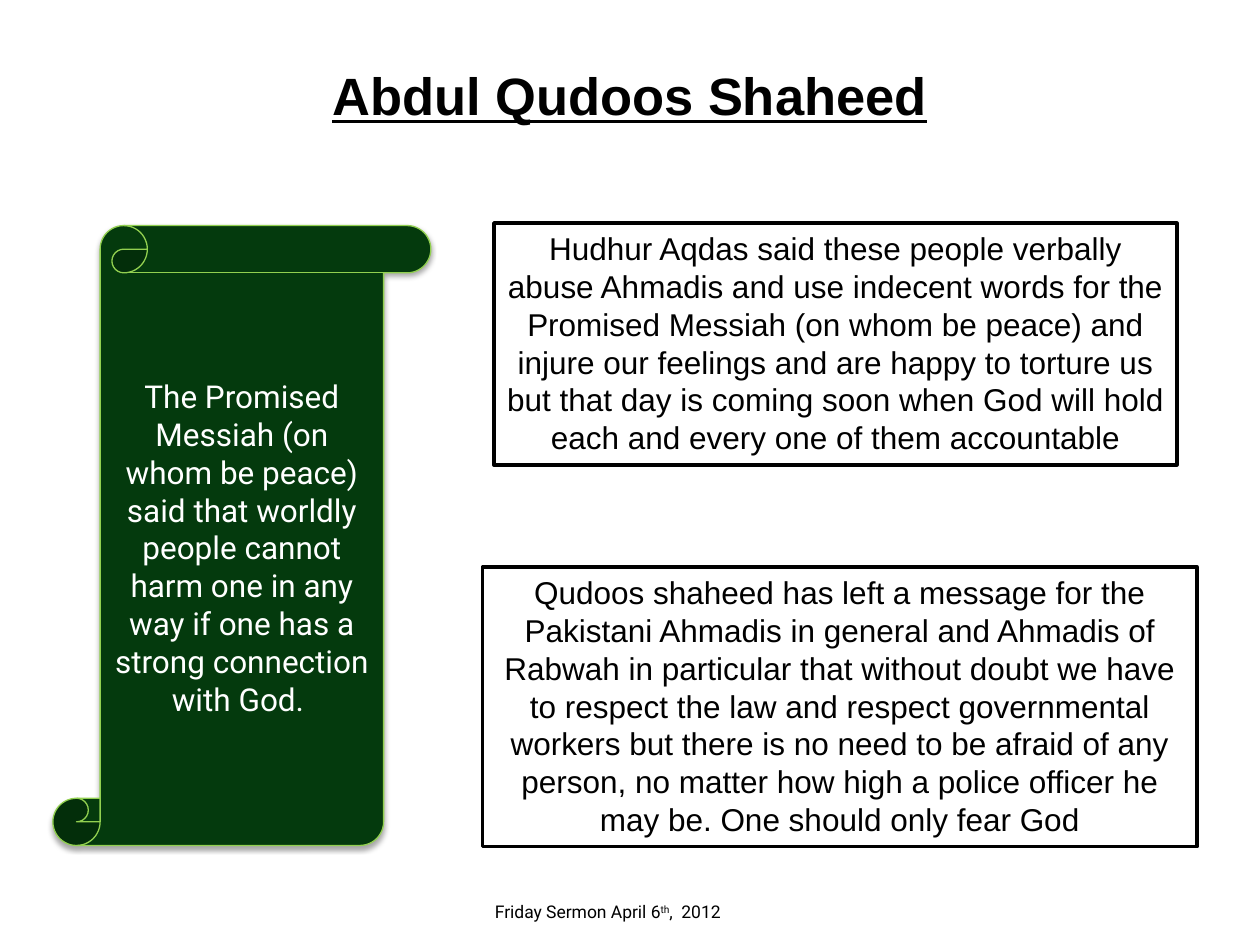
from lxml import etree
from pptx import Presentation
from pptx.dml.color import RGBColor
from pptx.enum.shapes import MSO_SHAPE
from pptx.enum.text import MSO_ANCHOR, MSO_AUTO_SIZE, PP_ALIGN
from pptx.oxml.ns import qn
from pptx.util import Inches, Pt

SCROLL = MSO_SHAPE.VERTICAL_SCROLL
RECT = MSO_SHAPE.RECTANGLE
TOP, MID = MSO_ANCHOR.TOP, MSO_ANCHOR.MIDDLE
GROW = MSO_AUTO_SIZE.SHAPE_TO_FIT_TEXT
FIXED = MSO_AUTO_SIZE.NONE
LEFT, CENTER = PP_ALIGN.LEFT, PP_ALIGN.CENTER
BLACK, WHITE, GREEN, LIME = "000000", "FFFFFF", "043A0D", "92D050"


def color(code):
    return RGBColor.from_string(code)


class Deck:
    title_font = {"name": "Arial", "size": Pt(30), "bold": True, "underline": True}
    body_font = {"name": "Arial", "size": Pt(18)}
    scroll_font = {"name": "Roboto", "size": Pt(18)}
    foot_font = {"name": "Roboto", "size": Pt(10)}

    def __init__(self, wide, high):
        self.show = Presentation()
        self.show.slide_width, self.show.slide_height = Inches(wide), Inches(high)
        self.slide = self.show.slides.add_slide(self.show.slide_layouts[5])

    def place(self, shape, box):
        for side, size in zip(("left", "top", "width", "height"), box):
            setattr(shape, side, Inches(size))

    def frame(self, shape, **form):
        for key, value in form.items():
            setattr(shape.text_frame, key, value)

    def letter(self, shape, parts, font, tint=BLACK, align=CENTER):
        para = shape.text_frame.paragraphs[0]
        para.alignment = align
        for part in parts:
            run = para.add_run()
            run.text = part
            for key, value in font.items():
                setattr(run.font, key, value)
            run.font.color.rgb = color(tint)

    def title(self, text, box):
        shape = self.slide.shapes.title
        self.place(shape, box)
        self.frame(shape, margin_left=0, margin_top=0, margin_right=0,
                   margin_bottom=0, vertical_anchor=TOP, auto_size=FIXED)
        self.letter(shape, [text], self.title_font)

    def panel(self, kind, box, fill, edge, width):
        shape = self.slide.shapes.add_shape(kind, *map(Inches, box))
        shape.shadow.inherit = False
        shape.fill.solid()
        shape.fill.fore_color.rgb = color(fill)
        shape.line.color.rgb = color(edge)
        shape.line.width = Pt(width)
        return shape

    def shade(self, shape):
        effects = next(shape.element.iter(qn("a:effectLst")))
        shadow = etree.SubElement(
            effects, qn("a:outerShdw"), blurRad=str(int(Pt(3.1))),
            dist=str(int(Pt(1.8))), dir="5400000", rotWithShape="0")
        tint = etree.SubElement(shadow, qn("a:srgbClr"), val=BLACK)
        etree.SubElement(tint, qn("a:alpha"), val="35000")

    def scroll(self, text, box):
        shape = self.panel(SCROLL, box, GREEN, LIME, 0.75)
        self.shade(shape)
        self.frame(shape, word_wrap=True, vertical_anchor=MID)
        self.letter(shape, [text], self.scroll_font, WHITE)

    def quote(self, text, box):
        shape = self.panel(RECT, box, WHITE, BLACK, 2)
        self.frame(shape, word_wrap=True, vertical_anchor=TOP, auto_size=GROW)
        self.letter(shape, [text], self.body_font)

    def footer(self, parts, box):
        shape = self.slide.shapes.add_textbox(*map(Inches, box))
        self.frame(shape, word_wrap=False, auto_size=GROW)
        self.letter(shape, parts, self.foot_font, align=LEFT)
        raised = list(shape.element.iter(qn("a:rPr")))[1]
        raised.set("baseline", "30000")


def main():
    deck = Deck(10, 7.5)
    deck.title("Abdul Qudoos Shaheed", (0.5, 0.5, 9, 1))
    deck.scroll(
        "The Promised Messiah (on whom be peace) said that worldly people cannot "
        "harm one in any way if one has a strong connection with God. ",
        (0.42, 1.79, 3, 4.92))
    deck.quote(
        "Hudhur Aqdas said these people verbally abuse Ahmadis and use indecent "
        "words for the Promised Messiah (on whom be peace) and injure our feelings "
        "and are happy to torture us but that day is coming soon when God will hold "
        "each and every one of them accountable",
        (3.92, 1.77, 5.42, 1.92))
    deck.quote(
        "Qudoos shaheed has left a message for the Pakistani Ahmadis in general and "
        "Ahmadis of Rabwah in particular that without doubt we have to respect the "
        "law and respect governmental workers but there is no need to be afraid of "
        "any person, no matter how high a police officer he may be. One should only "
        "fear God",
        (3.83, 4.5, 5.67, 2.22))
    deck.footer(["Friday Sermon April 6", "th", ",  2012"], (3.83, 7.1, 3, 0.27))
    deck.show.save("out.pptx")


if __name__ == "__main__":
    main()
